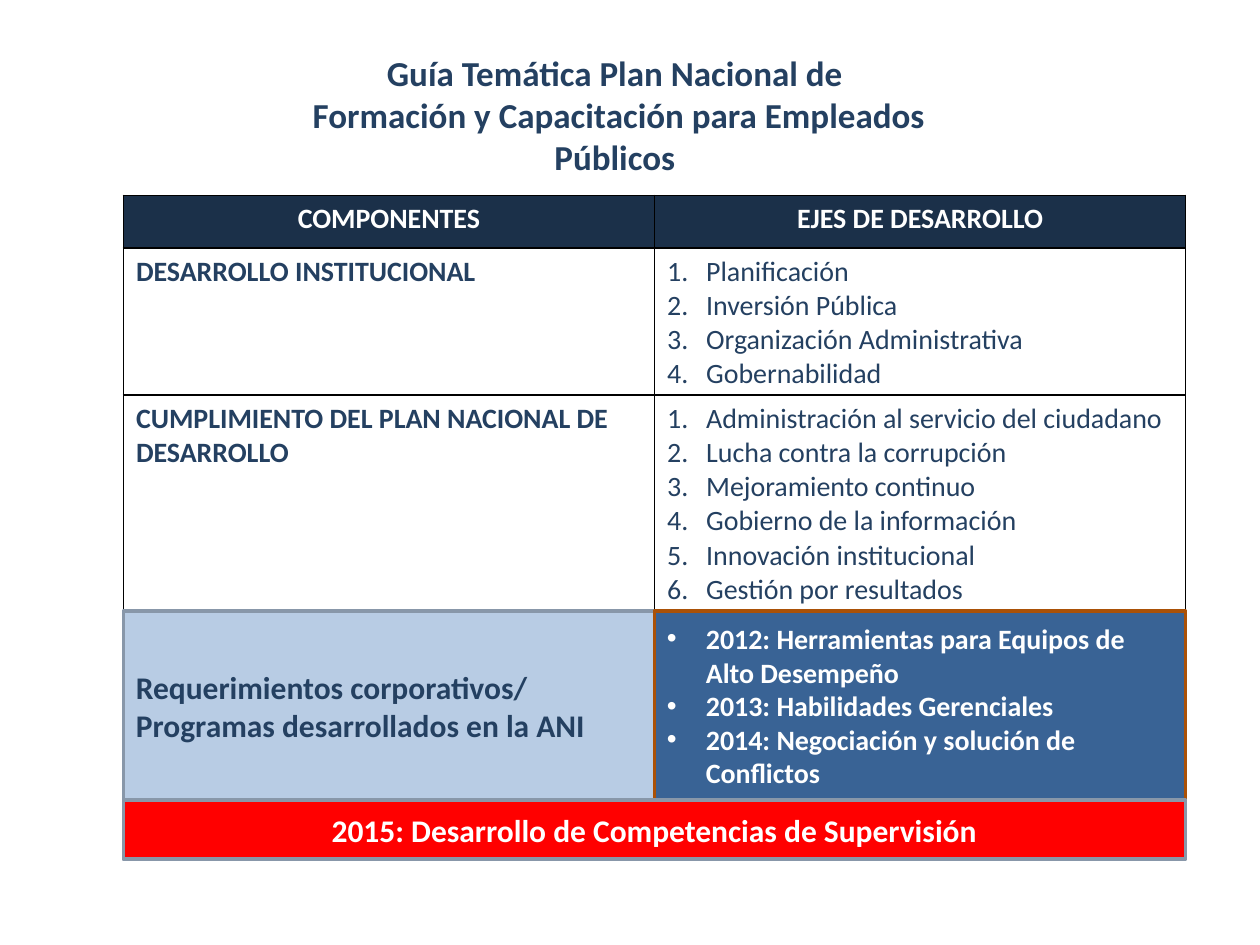
import pptx
import pptx.util
import pptx.dml.color
import pptx.enum.shapes
import pptx.enum.text
import pptx.oxml.ns
from lxml import etree

Inches, Pt = pptx.util.Inches, pptx.util.Pt
RGBColor = pptx.dml.color.RGBColor
ALIGN = pptx.enum.text.PP_ALIGN
ANCHOR = pptx.enum.text.MSO_ANCHOR

NAVY = RGBColor(0x24, 0x40, 0x61)
HEADER = RGBColor(0x1B, 0x30, 0x49)
PALE = RGBColor(0xB8, 0xCC, 0xE4)
BLUE = RGBColor(0x39, 0x63, 0x95)
RED = RGBColor(0xFF, 0x00, 0x00)
GREY = RGBColor(0x88, 0x97, 0xA9)
BROWN = RGBColor(0xAA, 0x51, 0x07)
WHITE = RGBColor(0xFF, 0xFF, 0xFF)

LEFT, WIDTH = 0.98, 8.43
TABLE_TOP = 1.55
ROWS = [0.42, 1.16, 1.64]
PROGRAMS_TOP, PROGRAMS_HEIGHT = 4.85, 1.5
FOOTER_HEIGHT = 0.47
LIST_INDENT = 0.31

COMPONENTS = [
    ("DESARROLLO INSTITUCIONAL",
     ["Planificación", "Inversión Pública", "Organización Administrativa",
      "Gobernabilidad"]),
    ("CUMPLIMIENTO DEL PLAN NACIONAL DE DESARROLLO",
     ["Administración al servicio del ciudadano", "Lucha contra la corrupción",
      "Mejoramiento continuo", "Gobierno de la información",
      "Innovación institucional", "Gestión por resultados"]),
]
PROGRAMS = ["2012: Herramientas para Equipos de Alto Desempeño",
            "2013: Habilidades Gerenciales",
            "2014: Negociación y solución de Conflictos"]


def add_child(parent, tag, **attributes):
    return etree.SubElement(parent, pptx.oxml.ns.qn(tag), attributes)


def write(frame, lines, size, color, bold=True, align=ALIGN.LEFT, marker=None):
    """Fill a text frame; marker is an optional (tag, attributes) list mark."""
    frame.word_wrap = True
    frame.text = "\n".join(lines)
    for para in frame.paragraphs:
        para.alignment = align
        if marker:
            tag, attributes = marker
            properties = para._p.get_or_add_pPr()
            properties.set("marL", str(Inches(LIST_INDENT)))
            properties.set("indent", str(-Inches(LIST_INDENT)))
            add_child(properties, "a:buFont", typeface="Arial" if tag == "a:buChar" else "Calibri")
            add_child(properties, tag, **attributes)
        for span in para.runs:
            span.font.name = "Calibri"
            span.font.size = Pt(size)
            span.font.bold = bold
            span.font.color.rgb = color


def set_borders(cell):
    properties = cell._tc.get_or_add_tcPr()
    for position, side in enumerate(("a:lnL", "a:lnR", "a:lnT", "a:lnB")):
        line = etree.Element(pptx.oxml.ns.qn(side), w=str(Pt(1)))
        add_child(add_child(line, "a:solidFill"), "a:srgbClr", val="000000")
        properties.insert(position, line)


def add_title(page, left, top, width, height):
    box = page.shapes.add_textbox(*map(Inches, (left, top, width, height)))
    write(box.text_frame,
          ["Guía Temática Plan Nacional de",
           " Formación y Capacitación para Empleados Públicos"],
          20, NAVY, align=ALIGN.CENTER)


def add_components_table(page, left, top, width):
    table = page.shapes.add_table(
        len(ROWS), 2, *map(Inches, (left, top, width, sum(ROWS)))).table
    for column in table.columns:
        column.width = Inches(width / 2)
    for row, height in zip(table.rows, ROWS):
        row.height = Inches(height)

    # Header row
    for cell, heading in zip(table.rows[0].cells, ("COMPONENTES", "EJES DE DESARROLLO")):
        write(cell.text_frame, [heading], 16, WHITE, align=ALIGN.CENTER)
        cell.fill.solid()
        cell.fill.fore_color.rgb = HEADER
        set_borders(cell)

    # Components with their numbered axes
    numbering = ("a:buAutoNum", {"type": "arabicPeriod"})
    for index, (component, axes) in enumerate(COMPONENTS, start=1):
        name_cell, axes_cell = table.cell(index, 0), table.cell(index, 1)
        write(name_cell.text_frame, [component], 16, NAVY)
        write(axes_cell.text_frame, axes, 16, NAVY, bold=False, marker=numbering)
        for cell in (name_cell, axes_cell):
            cell.fill.background()
            set_borders(cell)


def add_panel(page, left, top, width, height, fill, outline):
    panel = page.shapes.add_shape(pptx.enum.shapes.MSO_SHAPE.RECTANGLE,
                                  *map(Inches, (left, top, width, height)))
    panel.shadow.inherit = False
    panel.fill.solid()
    panel.fill.fore_color.rgb = fill
    panel.line.color.rgb = outline
    panel.line.width = Pt(2)
    panel.text_frame.vertical_anchor = ANCHOR.MIDDLE
    return panel.text_frame


def add_programs(page, left, top, width, height):
    half = width / 2
    frame = add_panel(page, left, top, half, height, PALE, GREY)
    write(frame, ["Requerimientos corporativos/ Programas desarrollados en la ANI"], 18, NAVY)
    frame = add_panel(page, left + half, top, half, height, BLUE, BROWN)
    write(frame, PROGRAMS, 16, WHITE, marker=("a:buChar", {"char": "•"}))


def add_footer(page, left, top, width, height):
    frame = add_panel(page, left, top, width, height, RED, GREY)
    write(frame, ["2015: Desarrollo de Competencias de Supervisión"], 18, WHITE,
          align=ALIGN.CENTER)


def main():
    deck = pptx.Presentation()
    deck.slide_width, deck.slide_height = Inches(10), Inches(7.5)
    page = deck.slides.add_slide(deck.slide_layouts[6])
    add_title(page, 1.85, 0.36, 6.06, 1.45)
    add_components_table(page, LEFT, TABLE_TOP, WIDTH)
    add_programs(page, LEFT, PROGRAMS_TOP, WIDTH, PROGRAMS_HEIGHT)
    add_footer(page, LEFT, PROGRAMS_TOP + PROGRAMS_HEIGHT, WIDTH, FOOTER_HEIGHT)
    deck.save("out.pptx")


if __name__ == "__main__":
    main()
